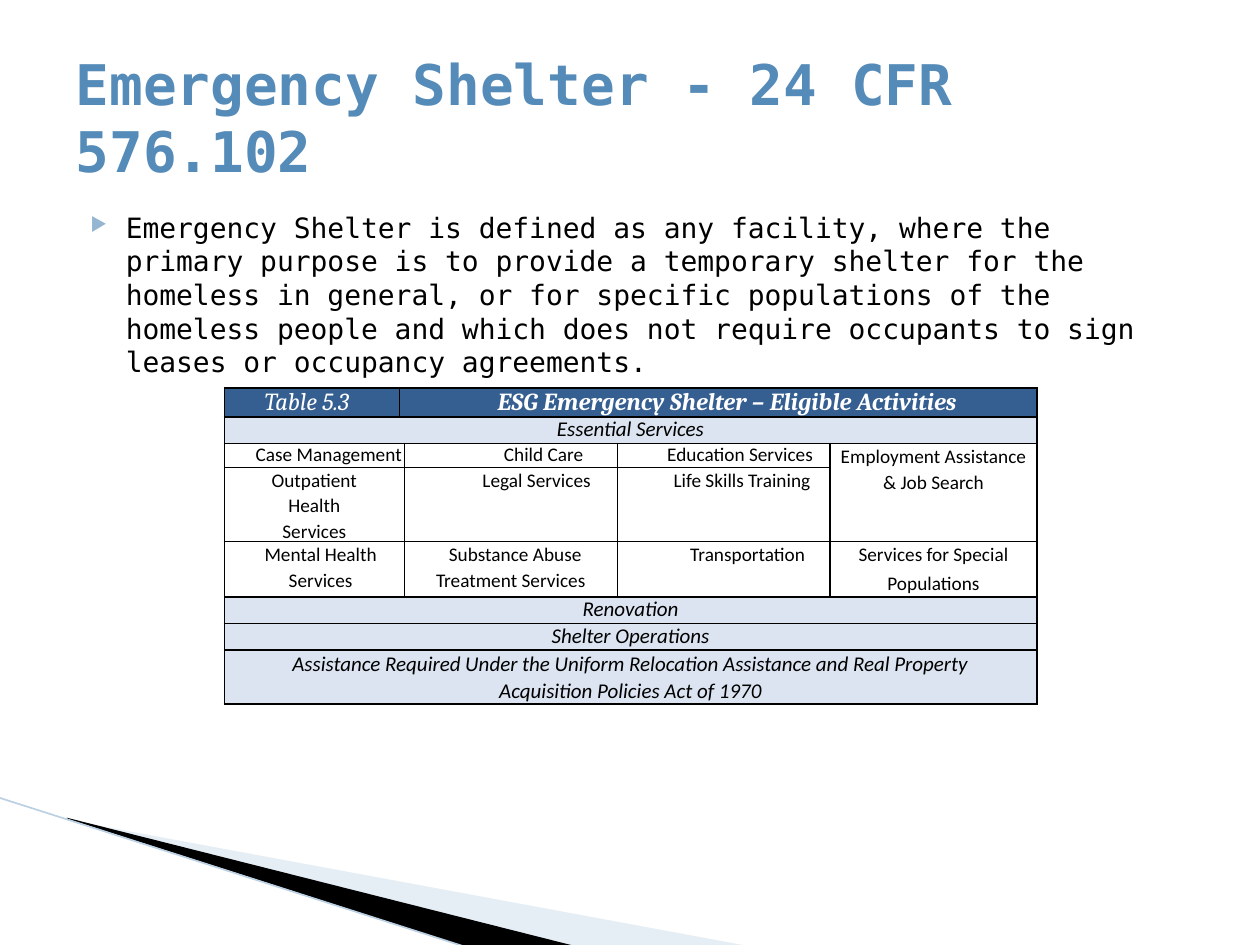
"""Build the Emergency Shelter slide with its table of eligible activities."""
import pptx
import pptx.dml.color
import pptx.enum.shapes
import pptx.enum.text
import pptx.oxml
import pptx.oxml.ns
import pptx.util
from pptx.util import Inches, Pt

RGBColor = pptx.dml.color.RGBColor
PP_ALIGN = pptx.enum.text.PP_ALIGN
BLACK = RGBColor(0x00, 0x00, 0x00)
WHITE = RGBColor(0xFF, 0xFF, 0xFF)
TITLE_BLUE = RGBColor(0x55, 0x8B, 0xB8)
HEADER_BLUE = RGBColor(0x36, 0x5F, 0x91)
SECTION_BLUE = RGBColor(0xDB, 0xE4, 0xF0)
WEDGE_BLUE = RGBColor(0xC0, 0xD3, 0xE6)
EDGE_BLUE = RGBColor(0xBB, 0xD0, 0xE3)
MONO = "DejaVu Sans Mono"

COLUMN_WIDTHS = [1.39, 0.04, 1.69, 1.69, 1.64]
ROW_HEIGHTS = [0.23, 0.21, 0.19, 0.38, 0.44, 0.21, 0.21, 0.41]
MERGES = [(0, 1, 0, 4), (2, 4, 3, 4)]
MERGES += [(row, 0, row, 1) for row in (2, 3, 4)]
MERGES += [(row, 0, row, 4) for row in (1, 5, 6, 7)]

SECTIONS = [
    (1, ["Essential Services"]),
    (5, ["Renovation"]),
    (6, ["Shelter Operations"]),
    (7, ["Assistance Required Under the Uniform Relocation Assistance and Real Property",
         "Acquisition Policies Act of 1970"]),
]

# row, column, lines, left, first-line and right indents, line spacing, space between
SERVICES = [
    (2, 0, ["Case Management"], (0.23, 0, 0), Pt(13.2), 0),
    (2, 2, ["Child Care"], (0.52, 0, 0), Pt(13.2), 0),
    (2, 3, ["Education Services"], (0.26, 0, 0), Pt(13.2), 0),
    (2, 4, ["Employment Assistance", "& Job Search"], (0, 0, 0), 1.07, 0),
    (3, 0, ["Outpatient", "Health", "Services"], (0.56, -0.31, 0.25), 1.07, 0),
    (3, 2, ["Legal Services"], (0.41, 0, 0), 1.07, 0),
    (3, 3, ["Life Skills Training"], (0.29, 0, 0), 1.07, 0),
    (4, 0, ["Mental Health Services"], (0.1, 0, 0), 1.07, 0),
    (4, 2, ["Substance Abuse Treatment Services"], (0.24, 0.07, 0.24), 1.07, 0),
    (4, 3, ["Transportation"], (0.38, 0, 0), 1.07, 0),
    (4, 4, ["Services for Special", "Populations"], (0.45, -0.23, 0.22), 1.07, 2),
]


def add_run(paragraph, text, font, size, color, bold=False, italic=False):
    """Add one formatted run to a paragraph."""
    run = paragraph.add_run()
    run.text = text
    run.font.name = font
    run.font.size = Pt(size)
    run.font.color.rgb = color
    run.font.bold = bold
    run.font.italic = italic


def set_indents(paragraph, left, first_line, right=0):
    """Set the paragraph indents in inches."""
    properties = paragraph._p.get_or_add_pPr()
    for name, value in (("marL", left), ("marR", right), ("indent", first_line)):
        properties.set(name, str(Inches(value)))


def add_element(parent, tag, position=None, **attributes):
    """Add a DrawingML element to a parent and return it."""
    element = pptx.oxml.parse_xml(f"<a:{tag} {pptx.oxml.ns.nsdecls('a')}/>")
    for name, value in attributes.items():
        element.set(name, str(value))
    parent.insert(len(parent) if position is None else position, element)
    return element


def add_wedge(slide, points, color, opacity=None):
    """Draw a filled corner wedge through points in inches."""
    corners = [(Inches(x), Inches(y)) for x, y in points]
    builder = slide.shapes.build_freeform(*corners[0])
    builder.add_line_segments(corners[1:], close=True)
    wedge = builder.convert_to_shape()
    wedge.shadow.inherit = False
    wedge.line.fill.background()
    wedge.fill.solid()
    wedge.fill.fore_color.rgb = color
    if opacity:
        fill_color = wedge._element.spPr.find(".//" + pptx.oxml.ns.qn("a:srgbClr"))
        add_element(fill_color, "alpha", val=opacity * 1000)


def add_edge_line(slide):
    """Draw the thin line along the corner wedges."""
    edge = slide.shapes.add_connector(
        pptx.enum.shapes.MSO_CONNECTOR.STRAIGHT,
        Inches(-0.01), Inches(6.33), Inches(3.71), Inches(7.52))
    edge.line.color.rgb = EDGE_BLUE
    edge.line.width = Pt(0.95)
    add_element(edge._element.spPr, "effectLst")


def fill_title(slide):
    """Place and write the slide title."""
    title = slide.shapes.title
    title.left, title.top = Inches(0.5), Inches(0.3)
    title.width, title.height = Inches(9), Inches(1.25)
    frame = title.text_frame
    frame.auto_size = pptx.enum.text.MSO_AUTO_SIZE.NONE
    frame.vertical_anchor = pptx.enum.text.MSO_ANCHOR.MIDDLE
    paragraph = frame.paragraphs[0]
    paragraph.alignment = PP_ALIGN.LEFT
    add_run(paragraph, "Emergency Shelter - 24 CFR 576.102", MONO, 32, TITLE_BLUE, bold=True)


def add_definition(slide):
    """Add the bulleted definition."""
    definition = slide.shapes.add_textbox(Inches(0.5), Inches(1.62), Inches(9), Inches(4.3))
    definition.text_frame.word_wrap = True
    paragraph = definition.text_frame.paragraphs[0]
    set_indents(paragraph, 0.4, -0.28)
    properties = paragraph._p.get_or_add_pPr()
    bullet_color = add_element(properties, "buClr")
    add_element(bullet_color, "srgbClr", val="94B6D2")
    add_element(properties, "buSzPct", val=68000)
    add_element(properties, "buChar", char="▶")
    add_run(paragraph,
            "Emergency Shelter is defined as any facility, where the primary purpose is to "
            "provide a temporary shelter for the homeless in general, or for specific "
            "populations of the homeless people and which does not require occupants to "
            "sign leases or occupancy agreements.", MONO, 16, BLACK)


def add_borders(cell):
    """Give a cell thin black borders on all four sides."""
    properties = cell._tc.get_or_add_tcPr()
    for position, side in enumerate(("lnL", "lnR", "lnT", "lnB")):
        border = add_element(properties, side, position, w=Pt(1))
        add_element(add_element(border, "solidFill"), "srgbClr", val=BLACK)


def write_cell(cell, lines, indents, spacing, style, gap=0, alignment=PP_ALIGN.CENTER):
    """Write lines into a cell, one paragraph each."""
    frame = cell.text_frame
    for index, line in enumerate(lines):
        paragraph = frame.add_paragraph() if index else frame.paragraphs[0]
        paragraph.alignment = alignment
        set_indents(paragraph, *indents)
        paragraph.line_spacing = spacing
        if index and gap:
            paragraph.space_before = Pt(gap)
        add_run(paragraph, line, **style)


def fill_cell(cell, color):
    """Fill a cell with a solid colour."""
    cell.fill.solid()
    cell.fill.fore_color.rgb = color


def add_activities(slide):
    """Add the table of eligible activities."""
    frame = slide.shapes.add_table(
        len(ROW_HEIGHTS), len(COLUMN_WIDTHS), Inches(1.78), Inches(3.08),
        Inches(sum(COLUMN_WIDTHS)), Inches(sum(ROW_HEIGHTS)))
    table = frame.table
    table.first_row = table.horz_banding = False
    for column, width in zip(table.columns, COLUMN_WIDTHS):
        column.width = Inches(width)
    for row, height in zip(table.rows, ROW_HEIGHTS):
        row.height = Inches(height)
    for cell in table.iter_cells():
        cell.margin_left = cell.margin_right = cell.margin_top = cell.margin_bottom = 0
        cell.fill.background()
        add_borders(cell)
    for top, left, bottom, right in MERGES:
        table.cell(top, left).merge(table.cell(bottom, right))

    header = dict(font="Cambria", size=14, color=WHITE, italic=True)
    section = dict(font="Calibri", size=12, color=BLACK, italic=True)
    service = dict(font="Calibri", size=11, color=BLACK)
    for column, text, indent, bold in (
            (0, "Table 5.3", 0.32, False),
            (1, "ESG Emergency Shelter – Eligible Activities", 0.78, True)):
        cell = table.cell(0, column)
        fill_cell(cell, HEADER_BLUE)
        write_cell(cell, [text], (indent, 0), Pt(16.3), dict(header, bold=bold),
                   alignment=PP_ALIGN.LEFT)
    for row, lines in SECTIONS:
        cell = table.cell(row, 0)
        fill_cell(cell, SECTION_BLUE)
        spacing = Pt(14.6) if len(lines) == 1 else 1.07
        write_cell(cell, lines, (0, 0), spacing, section)
    for row, column, lines, indents, spacing, gap in SERVICES:
        write_cell(table.cell(row, column), lines, indents, spacing, service, gap)


def main():
    """Build and save the slide."""
    presentation = pptx.Presentation()
    presentation.slide_width, presentation.slide_height = Inches(10), Inches(7.5)
    slide = presentation.slides.add_slide(presentation.slide_layouts[5])
    add_wedge(slide, [(0.55, 6.51), (5.95, 7.51), (4.56, 7.51), (0.55, 6.5)], WEDGE_BLUE, 40)
    add_wedge(slide, [(0.53, 6.49), (4.57, 7.51), (3.72, 7.52), (0.54, 6.5)], BLACK)
    add_edge_line(slide)
    add_definition(slide)
    fill_title(slide)
    add_activities(slide)
    presentation.save("out.pptx")


if __name__ == "__main__":
    main()
